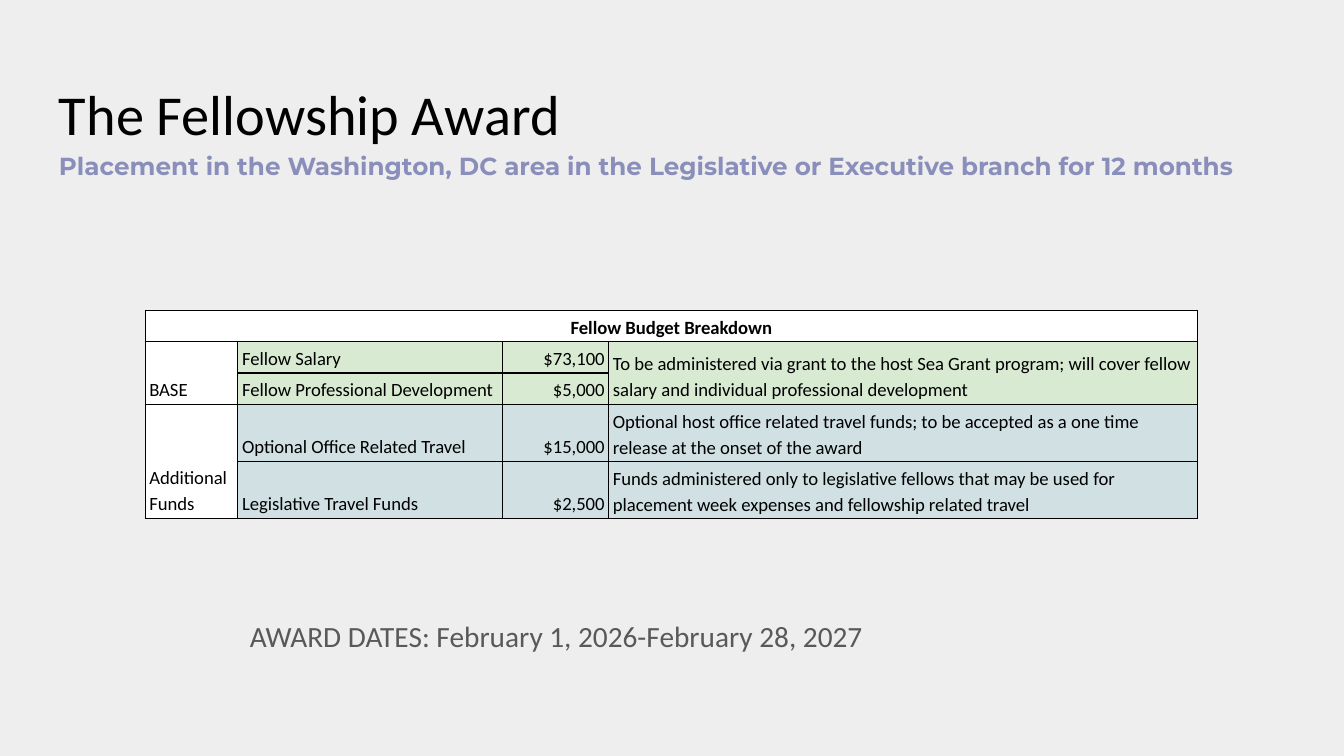
import pptx
import pptx.util
import pptx.dml.color
import pptx.enum.text
import pptx.oxml
import pptx.oxml.ns

Inches = pptx.util.Inches
Pt = pptx.util.Pt
RGBColor = pptx.dml.color.RGBColor
ALIGN = pptx.enum.text.PP_ALIGN
ANCHOR = pptx.enum.text.MSO_ANCHOR

BACK = RGBColor(0xEE, 0xEE, 0xEE)
BLACK = RGBColor(0, 0, 0)
WHITE = RGBColor(0xFF, 0xFF, 0xFF)
GREY = RGBColor(0x59, 0x59, 0x59)
LILAC = RGBColor(0x8A, 0x8E, 0xBB)
GREEN = RGBColor(0xD9, 0xEA, 0xD3)
BLUE = RGBColor(0xD0, 0xE0, 0xE3)

# Content: text, box, line spacing, space after, font
LINES = [
    ("The Fellowship Award", (0.34, 0.49, 9.32, 0.63), 1, 0,
     dict(size=30.2, name="Calibri", color=BLACK)),
    ("Placement in the Washington, DC area in the Legislative or Executive "
     "branch for 12 months", (0.34, 1.04, 9.32, 0.46), 0.95, 12,
     dict(size=13.2, name="Montserrat", color=LILAC, bold=True)),
    ("AWARD DATES: February 1, 2026-February 28, 2027",
     (1.76, 4.46, 6.48, 0.46), 1.15, 12,
     dict(size=15.7, name="Calibri", color=GREY)),
]
ROWS = [
    ("Fellow Budget Breakdown", "", "", ""),
    ("BASE", "Fellow Salary", "$73,100",
     "To be administered via grant to the host Sea Grant program; will cover "
     "fellow salary and individual professional development"),
    ("", "Fellow Professional Development", "$5,000", ""),
    ("Additional Funds", "Optional Office Related Travel", "$15,000",
     "Optional host office related travel funds; to be accepted as a one time "
     "release at the onset of the award"),
    ("", "Legislative Travel Funds", "$2,500",
     "Funds administered only to legislative fellows that may be used for "
     "placement week expenses and fellowship related travel"),
]
FILLS = [WHITE, GREEN, GREEN, BLUE, BLUE]
WIDTHS = [0.69, 1.97, 0.79, 4.38]
HEIGHTS = [0.23, 0.23, 0.23, 0.41, 0.41]
MERGES = [((0, 0), (0, 3)), ((1, 0), (2, 0)), ((1, 3), (2, 3)), ((3, 0), (4, 0))]
# Cell insets in points
INSETS = dict(margin_left=2.25, margin_top=1.5, margin_right=2.25,
              margin_bottom=1.5)


def write(para, text, look):
    run = para.add_run()
    run.text = text
    for key, val in look.items():
        if key == "color":
            run.font.color.rgb = val
        else:
            setattr(run.font, key, Pt(val) if key == "size" else val)


def border(cell):
    props = cell._tc.get_or_add_tcPr()
    for side in "LRTB":
        props.append(pptx.oxml.parse_xml(
            f'<a:ln{side} {pptx.oxml.ns.nsdecls("a")} w="9525"><a:solidFill>'
            f'<a:srgbClr val="{BLACK}"/></a:solidFill></a:ln{side}>'))


# Widescreen 16:9 slide
deck = pptx.Presentation()
deck.slide_width = Inches(10)
deck.slide_height = Inches(10 * 9 / 16)
slide = deck.slides.add_slide(deck.slide_layouts[6])
slide.background.fill.solid()
slide.background.fill.fore_color.rgb = BACK

# Title, subtitle and dates
for text, box, space, after, look in LINES:
    frame = slide.shapes.add_textbox(*map(Inches, box)).text_frame
    frame.word_wrap = True
    for side in INSETS:
        setattr(frame, side, Inches(0.1))
    para = frame.paragraphs[0]
    para.line_spacing = space
    para.space_after = Pt(after)
    write(para, text, look)

# Budget table
table = slide.shapes.add_table(
    len(ROWS), len(WIDTHS), Inches(1.08), Inches(2.31),
    Inches(sum(WIDTHS)), Inches(sum(HEIGHTS))).table
table.first_row = table.horz_banding = False
for col, width in zip(table.columns, WIDTHS):
    col.width = Inches(width)
for row, height in zip(table.rows, HEIGHTS):
    row.height = Inches(height)
for start, end in MERGES:
    table.cell(*start).merge(table.cell(*end))

for r, row in enumerate(ROWS):
    for c, text in enumerate(row):
        cell = table.cell(r, c)
        border(cell)
        cell.fill.solid()
        cell.fill.fore_color.rgb = FILLS[r] if c else WHITE
        cell.vertical_anchor = ANCHOR.BOTTOM
        for side, inset in INSETS.items():
            setattr(cell, side, Pt(inset))
        if text:
            para = cell.text_frame.paragraphs[0]
            para.line_spacing = 1.15
            para.alignment = (ALIGN.CENTER if r == 0 else
                              ALIGN.RIGHT if c == 2 else ALIGN.LEFT)
            write(para, text, dict(size=10, name="Calibri", color=BLACK,
                                   bold=r == 0))

deck.save("out.pptx")
